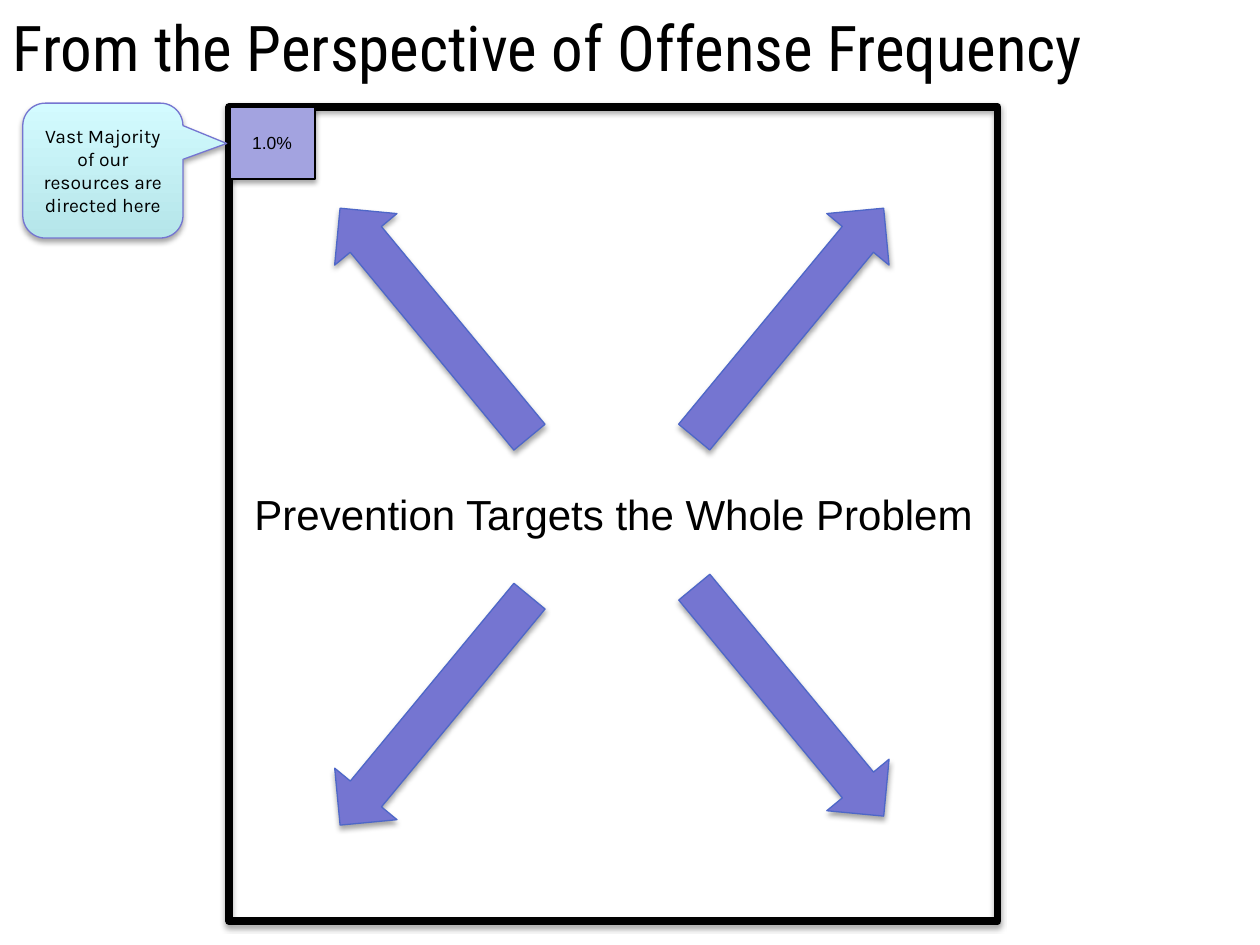
from lxml import etree
from pptx import Presentation
from pptx import util as u
from pptx.dml.color import RGBColor
from pptx.enum import shapes, text
from pptx.oxml.ns import qn

BLACK = RGBColor(0x00, 0x00, 0x00)
VIOLET = RGBColor(0x75, 0x75, 0xD1)
LILAC = RGBColor(0xA3, 0xA3, 0xE0)
BLUE = RGBColor(0x4E, 0x67, 0xC8)
AQUA = (RGBColor(0xB5, 0xE5, 0xE9), RGBColor(0xD3, 0xFB, 0xFF))

TITLE = ("From the Perspective of Offense Frequency", (0, 0.2, 25.4, 1.47))
MESSAGE = ("Prevention Targets the Whole Problem", (4.8, 9.73, 15.14, 1.27))
SHARE = ("1.0%", (4.57, 2.54, 1.83, 0.69))
RESOURCES = ("Vast Majority of our resources are directed here", (0.46, 2.08, 3.23, 2.72))

FRAME_BOX = (4.62, 2.16, 15.49, 16.41)
SHARE_BOX = (4.65, 2.16, 1.7, 1.45)
CALLOUT_ADJUSTMENTS = (0.773, -0.201, 0.167)

ARROW_SIZE = (1.63, 5.99)
ARROW_TILT = 39.6
ARROWS = [
    (7.95, 3.51, -ARROW_TILT),
    (15.09, 3.51, ARROW_TILT),
    (7.95, 11.33, 180 + ARROW_TILT),
    (15.09, 11.15, 180 - ARROW_TILT),
]

SHADOW = {"blurRad": u.Pt(3.1), "dist": u.Pt(1.8), "dir": 90 * 60000, "rotWithShape": 0}
SHADOW_ALPHA = 35000


def lengths(box):
    return [u.Cm(value) for value in box]


def write(shape, content, size, font_name, alignment, **frame_format):
    frame = shape.text_frame
    frame.text = content
    for name, value in frame_format.items():
        setattr(frame, name, value)
    paragraph = frame.paragraphs[0]
    paragraph.alignment = alignment
    for name, value in {"size": u.Pt(size), "name": font_name, "bold": False}.items():
        setattr(paragraph.font, name, value)
    paragraph.font.color.rgb = BLACK


def add_shadow(shape):
    shape.shadow.inherit = False
    effects = shape._element.spPr.find(qn("a:effectLst"))
    outer = etree.SubElement(effects, qn("a:outerShdw"))
    for name, value in SHADOW.items():
        outer.set(name, str(value))
    color = etree.SubElement(outer, qn("a:srgbClr"), val=str(BLACK))
    etree.SubElement(color, qn("a:alpha"), val=str(SHADOW_ALPHA))


def add_figure(slide, kind, box, fill, line_color, line_width):
    shape = slide.shapes.add_shape(kind, *lengths(box))
    if fill is None:
        shape.fill.background()
    elif isinstance(fill, RGBColor):
        shape.fill.solid()
        shape.fill.fore_color.rgb = fill
    else:
        shape.fill.gradient()
        shape.fill.gradient_angle = 90
        for stop, position, color in zip(shape.fill.gradient_stops, (0, 1), fill):
            stop.position = position
            stop.color.rgb = color
    shape.line.color.rgb = line_color
    shape.line.width = u.Pt(line_width)
    add_shadow(shape)
    return shape


def add_label(slide, label, size, wrap):
    content, box = label
    write(slide.shapes.add_textbox(*lengths(box)), content, size, "Arial",
          text.PP_ALIGN.CENTER, word_wrap=wrap,
          auto_size=text.MSO_AUTO_SIZE.SHAPE_TO_FIT_TEXT)


def main():
    presentation = Presentation()
    presentation.slide_width, presentation.slide_height = lengths((25.4, 19.05))
    slide = presentation.slides.add_slide(presentation.slide_layouts[5])
    kinds = shapes.MSO_SHAPE

    title = slide.shapes.title
    content, box = TITLE
    for name, value in zip(("left", "top", "width", "height"), lengths(box)):
        setattr(title, name, value)
    write(title, content, 36, "Roboto Condensed", text.PP_ALIGN.LEFT,
          vertical_anchor=text.MSO_ANCHOR.MIDDLE, auto_size=text.MSO_AUTO_SIZE.NONE)

    add_figure(slide, kinds.RECTANGLE, FRAME_BOX, None, BLACK, 4.5)
    add_label(slide, MESSAGE, 24, False)

    for left, top, rotation in ARROWS:
        arrow = add_figure(slide, kinds.UP_ARROW, (left, top, *ARROW_SIZE), VIOLET, BLUE, 0.75)
        arrow.rotation = rotation

    content, box = RESOURCES
    callout = add_figure(slide, kinds.ROUNDED_RECTANGULAR_CALLOUT, box, AQUA, VIOLET, 0.75)
    for index, value in enumerate(CALLOUT_ADJUSTMENTS):
        callout.adjustments[index] = value
    write(callout, content, 11, "Karla", text.PP_ALIGN.CENTER,
          vertical_anchor=text.MSO_ANCHOR.MIDDLE, word_wrap=True)

    add_figure(slide, kinds.RECTANGLE, SHARE_BOX, LILAC, BLACK, 1)
    add_label(slide, SHARE, 10, True)

    presentation.save("out.pptx")


if __name__ == "__main__":
    main()
